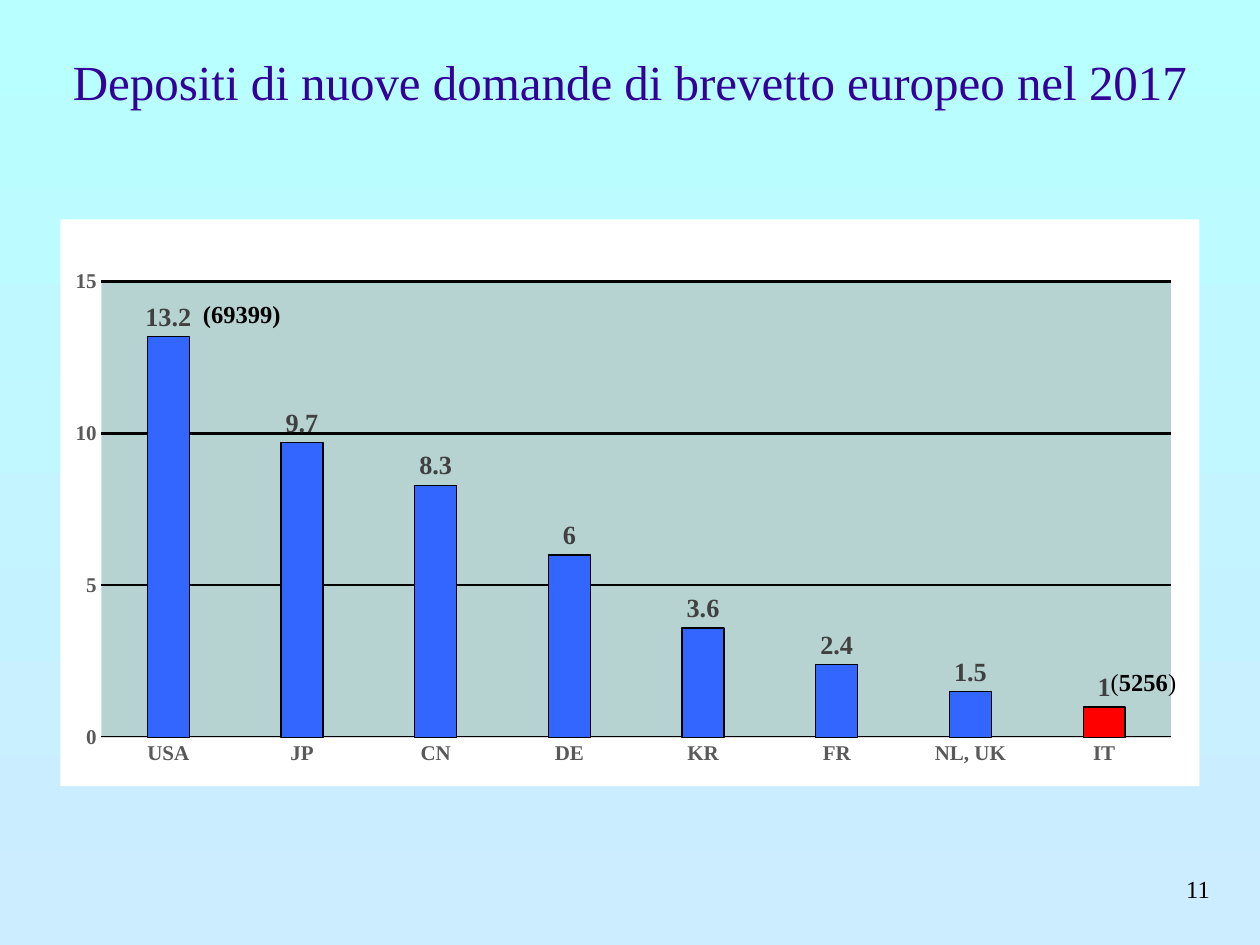
from lxml import etree
from pptx import Presentation
from pptx.chart.data import CategoryChartData
from pptx.dml.color import RGBColor
from pptx.enum.chart import XL_CHART_TYPE, XL_LABEL_POSITION, XL_TICK_MARK
from pptx.enum.text import MSO_ANCHOR, PP_ALIGN
from pptx.oxml import parse_xml
from pptx.oxml.ns import nsdecls, qn
from pptx.util import Inches, Pt

FONT = "Times New Roman"
DEPOSITS = {"USA": 13.2, "JP": 9.7, "CN": 8.3, "DE": 6,
            "KR": 3.6, "FR": 2.4, "NL, UK": 1.5, "IT": 1}


def color(hex_code):
    return RGBColor.from_string(hex_code)


def style_font(font, size, hex_code, bold=False):
    font.name, font.size, font.bold = FONT, Pt(size), bold
    font.color.rgb = color(hex_code)


def paint(fill, hex_code):
    fill.solid()
    fill.fore_color.rgb = color(hex_code)


def outline(line, hex_code, width):
    line.color.rgb = color(hex_code)
    line.width = Pt(width)


def place(shape, left, top, width, height):
    shape.left, shape.top = Inches(left), Inches(top)
    shape.width, shape.height = Inches(width), Inches(height)


def write(shape, runs, size=14, hex_code="000000", align=PP_ALIGN.CENTER,
          anchor=MSO_ANCHOR.TOP, spacing=None):
    """Fill a shape with one paragraph of (text, bold) runs."""
    frame = shape.text_frame
    frame.word_wrap = True
    frame.vertical_anchor = anchor
    paragraph = frame.paragraphs[0]
    paragraph.alignment = align
    paragraph.line_spacing = spacing
    for text, bold in runs:
        run = paragraph.add_run()
        run.text = text
        style_font(run.font, size, hex_code, bold)


def add_text(slide, box, runs, **text_format):
    write(slide.shapes.add_textbox(*map(Inches, box)), runs, **text_format)


def set_background(slide, top, bottom):
    fill = slide.background.fill
    fill.gradient()
    fill.gradient_angle = 270
    for stop, hex_code in zip(fill.gradient_stops, (top, bottom)):
        stop.color.rgb = color(hex_code)


def fill_chart_areas(chart, chart_hex, plot_hex):
    """Colour the chart and plot areas and fix the inner plot position."""
    def area(hex_code):
        return parse_xml(
            f'<c:spPr {nsdecls("c", "a")}><a:solidFill><a:srgbClr val="{hex_code}"/>'
            '</a:solidFill><a:ln><a:noFill/></a:ln></c:spPr>')

    plot_area = chart._chartSpace.chart.plotArea
    plot_area.append(area(plot_hex))
    chart._chartSpace.chart.addnext(area(chart_hex))
    for old_layout in plot_area.findall(qn("c:layout")):
        plot_area.remove(old_layout)
    layout = etree.Element(qn("c:layout"))
    manual = etree.SubElement(layout, qn("c:manualLayout"))
    settings = {"layoutTarget": "inner", "xMode": "edge", "yMode": "edge",
                "x": 0.036, "y": 0.11, "w": 0.939, "h": 0.804}
    for tag, value in settings.items():
        etree.SubElement(manual, qn(f"c:{tag}")).set("val", str(value))
    plot_area.insert(0, layout)


def style_axes(chart):
    countries, values = chart.category_axis, chart.value_axis
    for axis in (countries, values):
        axis.major_tick_mark = axis.minor_tick_mark = XL_TICK_MARK.NONE
        style_font(axis.tick_labels.font, 12, "595959", True)
    outline(countries.format.line, "D9D9D9", 0.75)
    values.format.line.fill.background()
    values.minimum_scale, values.maximum_scale, values.major_unit = 0, 15, 5
    outline(values.major_gridlines.format.line, "000000", 1.25)


def add_deposits_chart(slide, box):
    deposits = CategoryChartData()
    deposits.categories = list(DEPOSITS)
    deposits.add_series("", list(DEPOSITS.values()))
    chart = slide.shapes.add_chart(
        XL_CHART_TYPE.COLUMN_CLUSTERED, *map(Inches, box), deposits).chart
    chart.has_title = chart.has_legend = False
    style_font(chart.font, 10, "000000")
    style_axes(chart)

    # Columns, with Italy highlighted
    plot = chart.plots[0]
    plot.gap_width, plot.overlap, plot.vary_by_categories = 219, -27, False
    columns = plot.series[0]
    italy = columns.points[list(DEPOSITS).index("IT")]
    for part, hex_code in ((columns, "3366FF"), (italy, "FF0000")):
        paint(part.format.fill, hex_code)
        outline(part.format.line, "000000", 0.75)

    # Values above the columns
    labels = columns.data_labels
    labels.show_value = True
    labels.position = XL_LABEL_POSITION.OUTSIDE_END
    style_font(labels.font, 15, "404040", True)
    fill_chart_areas(chart, "FFFFFF", "B6D3D2")


def main():
    deck = Presentation()
    deck.slide_width, deck.slide_height = Inches(10), Inches(7.5)
    slide = deck.slides.add_slide(deck.slide_layouts[5])
    set_background(slide, "B8FFFF", "CCECFF")

    # Title
    title = slide.shapes.title
    place(title, 0, 0.11, 10, 1.07)
    write(title, [("Depositi di nuove domande di brevetto europeo nel 2017", False)],
          size=28, hex_code="330099", anchor=MSO_ANCHOR.MIDDLE)

    # Chart and absolute counts for the first and last country
    add_deposits_chart(slide, (0.48, 1.74, 9.04, 4.5))
    add_text(slide, (1.24, 2.39, 1.36, 0.27), [("(69399)", True)], spacing=0.7)
    add_text(slide, (8.42, 5.31, 1.36, 0.27),
             [("(", False), ("5256", True), (") ", False)], spacing=0.7)

    # Slide number
    add_text(slide, (7.62, 6.8, 2.08, 0.5), [("11", False)],
             align=PP_ALIGN.RIGHT, anchor=MSO_ANCHOR.MIDDLE)
    deck.save("out.pptx")


if __name__ == "__main__":
    main()
